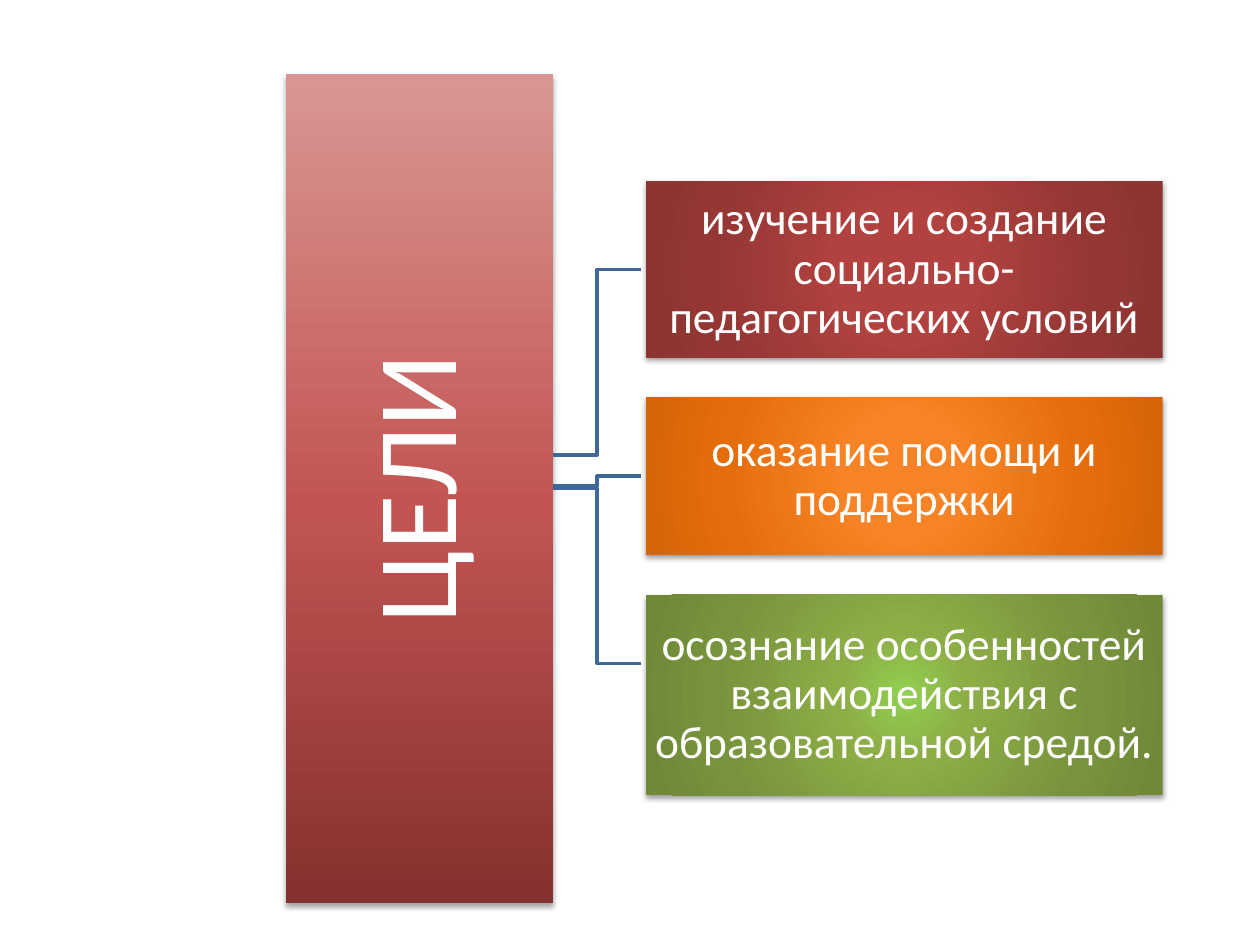
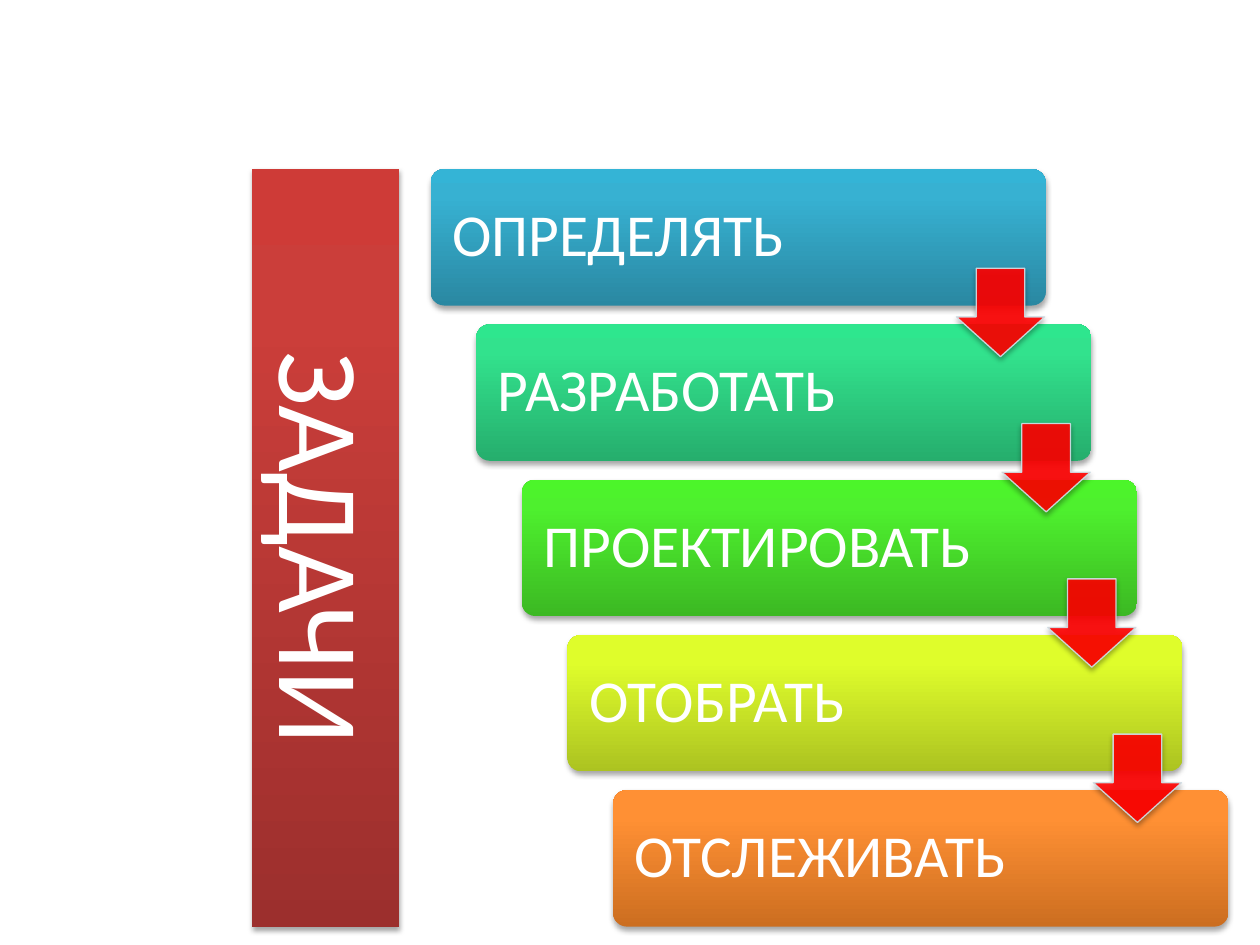
"""Build two slides: the goals and the tasks of the support work."""
from dataclasses import dataclass

from pptx import Presentation
from pptx.dml.color import RGBColor
from pptx.enum.shapes import MSO_SHAPE as Preset
from pptx.enum.text import MSO_ANCHOR as Anchor, MSO_AUTO_SIZE as AutoSize, PP_ALIGN as Align
from pptx.oxml import parse_xml
from pptx.oxml.ns import nsdecls, qn
from pptx.util import Cm, Pt

FONT = "Calibri"
COLORS = {
    "text": "FFFFFF",
    "link": "3F6797",
    "arrow": "FF0000",
    "arrow_edge": "D0E3EA",
    "shadow": "000000",
}
GRADIENTS = {
    "goals": {0: "85312F", 48: "C25552", 100: "D99694"},
    "tasks": {0: "9C2F2D", 80: "CB3E3A", 100: "CE3B37"},
    "brick": {0: "B1423F", 23: "B1423F", 69: "953735", 97: "8B3431"},
    "orange": {0: "F68325", 23: "F68325", 69: "E46C0A", 97: "D56509"},
    "olive": {0: "92D050", 23: "8DAE47", 69: "77933C", 97: "6F8938"},
    "blue": {0: "2A88A2", 80: "37B1D2", 100: "34B4D6"},
    "mint": {0: "26AE6D", 80: "32E28D", 100: "2EE68E"},
    "green": {0: "3CB923", 80: "4EF02E", 100: "4CF52A"},
    "lime": {0: "ACC321", 80: "DFFD2B", 100: "E1FF2B"},
    "amber": {0: "CC6E20", 80: "FF9034", 100: "FF9136"},
}
UPWARD = '<a:lin ang="16200000" scaled="0"/>'
RADIAL = '<a:path path="circle"><a:fillToRect l="50000" t="50000" r="50000" b="50000"/></a:path>'


@dataclass(frozen=True)
class Box:
    """A rectangle in centimetres."""
    left: float
    top: float
    width: float
    height: float

    def lengths(self) -> tuple:
        """Return left, top, width and height as lengths."""
        return Cm(self.left), Cm(self.top), Cm(self.width), Cm(self.height)

    def turned(self) -> "Box":
        """Return the box with the same centre and swapped sides."""
        shift = (self.width - self.height) / 2
        return Box(self.left + shift, self.top - shift, self.height, self.width)


@dataclass(frozen=True)
class Band:
    """An upright title band."""
    title: str
    box: Box
    gradient: str
    size: float
    spacing: float
    rotation: float


@dataclass(frozen=True)
class Goal:
    """A goal card and the heights where its link starts and ends."""
    text: str
    gradient: str
    height: float
    link_start: float
    link_end: float


@dataclass(frozen=True)
class Task:
    """A stair of the task list."""
    text: str
    gradient: str


GOALS_BAND = Band("ЦЕЛИ", Box(5.77, 1.5, 5.38, 16.71), "goals", 65, 0.9, 270)
TASKS_BAND = Band("ЗАДАЧИ", Box(5.08, 3.41, 2.97, 15.27), "tasks", 66, 1.0, 90)
GOALS = [
    Goal("изучение и создание социально-педагогических условий", "brick", 3.56, 9.17, 5.43),
    Goal("оказание помощи и поддержки", "orange", 3.18, 9.8, 9.6),
    Goal("осознание особенностей взаимодействия с образовательной средой.",
         "olive", 4.04, 9.85, 13.38),
]
TASKS = [
    Task("ОПРЕДЕЛЯТЬ", "blue"),
    Task("РАЗРАБОТАТЬ", "mint"),
    Task("ПРОЕКТИРОВАТЬ", "green"),
    Task("ОТОБРАТЬ", "lime"),
    Task("ОТСЛЕЖИВАТЬ", "amber"),
]
CARD_LEFT, CARD_TOP, CARD_WIDTH, CARD_GAP = 13.02, 3.65, 10.42, 0.8
LINK_XS = (11.15, 12.04, 12.93)
FIRST_STEP = Box(8.68, 3.41, 12.4, 2.75)
STEP_RIGHT, STEP_DOWN = 0.92, 3.13
ARROW_RIGHT, ARROW_DOWN, ARROW_SIZE = 10.6, 2.0, 1.78


def rgb(name: str) -> RGBColor:
    """Look up a named colour."""
    return RGBColor.from_string(COLORS[name])


def set_shadow(shape, opacity: int = 35, distance: float = 1.8) -> None:
    """Give a shape a soft shadow below it."""
    shape.shadow.inherit = False
    shape._element.spPr.find(qn("a:effectLst")).append(parse_xml(
        f'<a:outerShdw {nsdecls("a")} blurRad="{Pt(3.1)}" dist="{Pt(distance)}" dir="5400000" '
        f'rotWithShape="0"><a:srgbClr val="{COLORS["shadow"]}">'
        f'<a:alpha val="{opacity * 1000}"/></a:srgbClr></a:outerShdw>'))


def add_panel(slide, preset, box: Box, gradient: str, direction: str = UPWARD):
    """Draw a shape without outline, filled with a named gradient."""
    panel = slide.shapes.add_shape(preset, *box.lengths())
    stops = "".join(f'<a:gs pos="{pos * 1000}"><a:srgbClr val="{color}"/></a:gs>'
                    for pos, color in GRADIENTS[gradient].items())
    panel.fill.background()
    properties = panel._element.spPr
    properties.replace(properties.find(qn("a:noFill")), parse_xml(
        f'<a:gradFill {nsdecls("a")} rotWithShape="1"><a:gsLst>{stops}</a:gsLst>'
        f'{direction}</a:gradFill>'))
    panel.line.fill.background()
    return panel


def write(shape, text: str, size: float, align: Align, inset: float,
          spacing: float = 0.9) -> None:
    """Write one white paragraph into a shape."""
    frame = shape.text_frame
    frame.text = text
    frame.word_wrap = True
    frame.auto_size = AutoSize.NONE
    frame.vertical_anchor = Anchor.MIDDLE
    frame.margin_left = frame.margin_right = Cm(inset)
    frame.margin_top = frame.margin_bottom = Cm(inset)
    paragraph = frame.paragraphs[0]
    paragraph.alignment = align
    paragraph.line_spacing = spacing
    paragraph.font.name = FONT
    paragraph.font.size = Pt(size)
    paragraph.font.color.rgb = rgb("text")


def add_band_slide(deck, band: Band):
    """Add a slide whose title is turned to run along a gradient band."""
    slide = deck.slides.add_slide(deck.slide_layouts[5])
    set_shadow(add_panel(slide, Preset.RECTANGLE, band.box, band.gradient))
    title = slide.shapes.title
    title.left, title.top, title.width, title.height = band.box.turned().lengths()
    title.rotation = band.rotation
    write(title, band.title, band.size, Align.CENTER, 0.13, band.spacing)
    slide.shapes._spTree.append(title._element)
    return slide


def add_link(slide, goal: Goal) -> None:
    """Draw the elbow line from the band to a goal card."""
    start, bend, end = (Cm(x) for x in LINK_XS)
    y_start, y_end = Cm(goal.link_start), Cm(goal.link_end)
    builder = slide.shapes.build_freeform(start, y_start)
    builder.add_line_segments([(bend, y_start), (bend, y_end), (end, y_end)], close=False)
    link = builder.convert_to_shape()
    link.fill.background()
    link.line.color.rgb = rgb("link")
    link.line.width = Pt(2)
    link.shadow.inherit = False


def add_goal(slide, goal: Goal, top: float) -> None:
    """Draw a goal card."""
    box = Box(CARD_LEFT, top, CARD_WIDTH, goal.height)
    card = add_panel(slide, Preset.RECTANGLE, box, goal.gradient, RADIAL)
    set_shadow(card, 38, 1.6)
    write(card, goal.text, 26, Align.CENTER, 0.05)


def add_task(slide, task: Task, box: Box) -> None:
    """Draw one stair of the task list."""
    step = add_panel(slide, Preset.ROUNDED_RECTANGLE, box, task.gradient)
    step.adjustments[0] = 0.1
    set_shadow(step)
    write(step, task.text, 34, Align.LEFT, 0.36)


def add_arrow(slide, step: Box) -> None:
    """Draw the arrow leading from a stair to the next one."""
    arrow = slide.shapes.add_shape(Preset.DOWN_ARROW, *Box(
        step.left + ARROW_RIGHT, step.top + ARROW_DOWN, ARROW_SIZE, ARROW_SIZE).lengths())
    arrow.adjustments[0], arrow.adjustments[1] = 0.55, 0.45
    arrow.fill.solid()
    arrow.fill.fore_color.rgb = rgb("arrow")
    arrow.line.color.rgb = rgb("arrow_edge")
    arrow.line.width = Pt(0.75)
    for color in arrow._element.spPr.iter(qn("a:srgbClr")):
        color.append(parse_xml(f'<a:alpha {nsdecls("a")} val="90000"/>'))
    set_shadow(arrow)


def build_goals(deck) -> None:
    """Build the slide of goals."""
    slide = add_band_slide(deck, GOALS_BAND)
    for goal in reversed(GOALS):
        add_link(slide, goal)
    top = CARD_TOP
    for goal in GOALS:
        add_goal(slide, goal, top)
        top += goal.height + CARD_GAP


def build_tasks(deck) -> None:
    """Build the slide of tasks."""
    slide = add_band_slide(deck, TASKS_BAND)
    steps = [Box(FIRST_STEP.left + i * STEP_RIGHT, FIRST_STEP.top + i * STEP_DOWN,
                 FIRST_STEP.width, FIRST_STEP.height) for i in range(len(TASKS))]
    for task, step in zip(TASKS, steps):
        add_task(slide, task, step)
    for step in steps[:-1]:
        add_arrow(slide, step)


def main() -> None:
    """Build and save the deck."""
    deck = Presentation()
    deck.slide_width, deck.slide_height = Cm(25.4), Cm(19.05)
    build_goals(deck)
    build_tasks(deck)
    deck.save("out.pptx")


if __name__ == "__main__":
    main()
